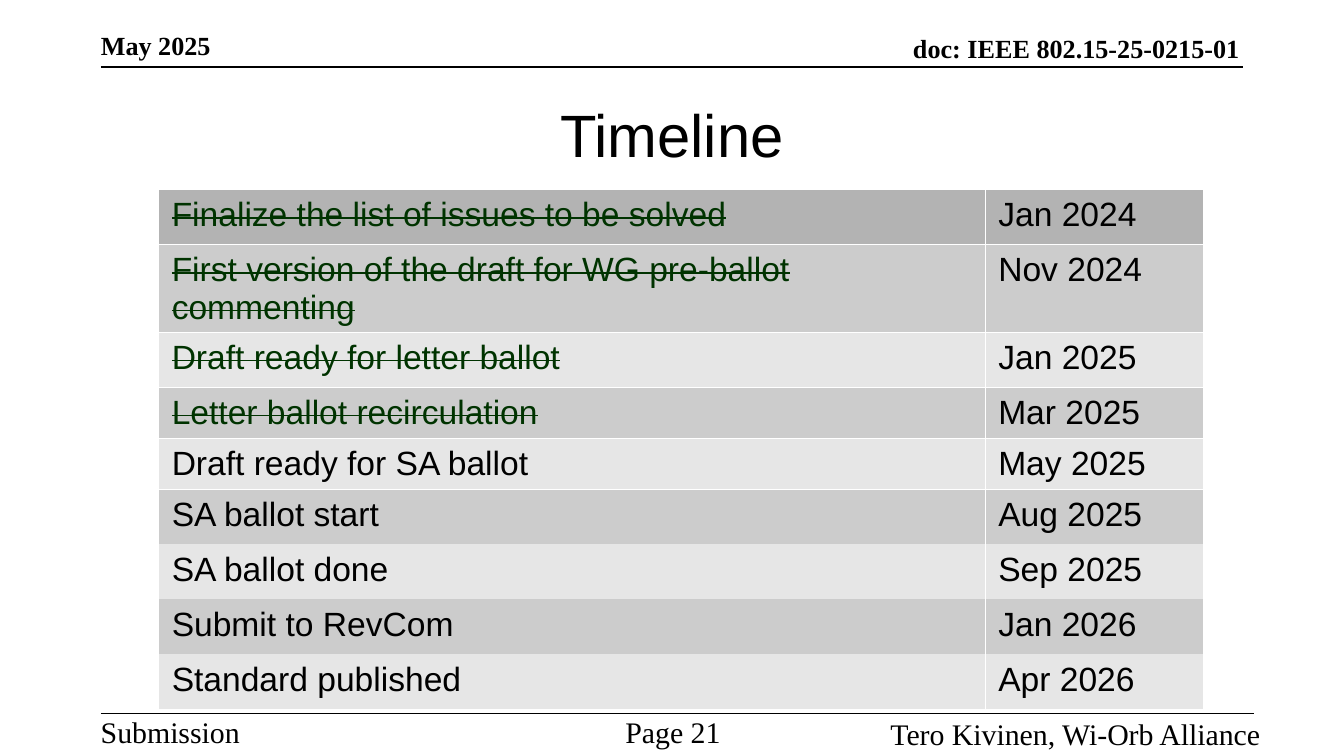
from typing import NamedTuple

from lxml.etree import SubElement
from pptx import Presentation
from pptx.dml.color import RGBColor
from pptx.enum.shapes import MSO_CONNECTOR
from pptx.enum.text import MSO_ANCHOR as Anchor, PP_ALIGN as Align
from pptx.oxml.ns import qn
from pptx.util import Pt

BLACK = RGBColor(0x00, 0x00, 0x00)
DONE_GREEN = RGBColor(0x00, 0x33, 0x00)
HEADER_GRAY = RGBColor(0xB3, 0xB3, 0xB3)
BAND_DARK = RGBColor(0xCC, 0xCC, 0xCC)
BAND_LIGHT = RGBColor(0xE6, 0xE6, 0xE6)
WHITE = RGBColor(0xFF, 0xFF, 0xFF)

SERIF = "Times New Roman"
SANS = "Arial"


class Label(NamedTuple):
    text: str
    left: float
    top: float
    width: float
    height: float
    size: float
    align: Align = Align.LEFT
    anchor: Anchor = Anchor.TOP
    bold: bool = False


class Rule(NamedTuple):
    left: float
    right: float
    y: float


class Milestone(NamedTuple):
    task: str
    date: str
    done: bool = False
    height: float = 29.5
    bottom_margin: float = 3.6  # 0 lets a tight row keep its height


LABELS = [
    Label("May 2025", 54, 21.6, 200.9, 10.8, 14, anchor=Anchor.BOTTOM, bold=True),
    Label("doc: IEEE 802.15-25-0215-01", 243.7, 23.3, 420.5, 10.8, 14,
          Align.RIGHT, Anchor.BOTTOM, True),
    Label("Submission", 54, 382.3, 134.6, 16.6, 16),
    Label("Page 21", 295.2, 382.3, 130.6, 16.6, 16, Align.CENTER),
    Label("Tero Kivinen, Wi-Orb Alliance", 411.1, 383.2, 264.2, 16.6, 16, Align.RIGHT),
]

RULES = [Rule(54, 666, 36), Rule(54, 671.8, 382.3)]

MILESTONES = [
    Milestone("Finalize the list of issues to be solved", "Jan 2024", True),
    Milestone("First version of the draft for WG pre-ballot commenting", "Nov 2024",
              True, 46.9, 0),
    Milestone("Draft ready for letter ballot", "Jan 2025", True),
    Milestone("Letter ballot recirculation", "Mar 2025", True, 27.4, 0),
    Milestone("Draft ready for SA ballot", "May 2025", False, 27.4, 0),
    Milestone("SA ballot start", "Aug 2025"),
    Milestone("SA ballot done", "Sep 2025"),
    Milestone("Submit to RevCom", "Jan 2026"),
    Milestone("Standard published", "Apr 2026"),
]
COLUMN_WIDTHS = [442.8, 117]
LAST_RULED_ROW = 5  # rows below this one have no line between them


def add_run(paragraph, text: str, font: str, size: float,
            color: RGBColor = BLACK, bold: bool = False, strike: bool = False) -> None:
    run = paragraph.add_run()
    run.text = text
    run.font.name = font
    run.font.size = Pt(size)
    run.font.bold = bold
    run.font.color.rgb = color
    if strike:
        run._r.get_or_add_rPr().set("strike", "sngStrike")


def clear_margins(frame) -> None:
    frame.margin_left = frame.margin_right = Pt(0)
    frame.margin_top = frame.margin_bottom = Pt(0)


def add_label(slide, label: Label) -> None:
    box = slide.shapes.add_textbox(Pt(label.left), Pt(label.top),
                                   Pt(label.width), Pt(label.height))
    frame = box.text_frame
    frame.word_wrap = True
    frame.vertical_anchor = label.anchor
    clear_margins(frame)
    paragraph = frame.paragraphs[0]
    paragraph.alignment = label.align
    add_run(paragraph, label.text, SERIF, label.size, bold=label.bold)


def add_rule(slide, rule: Rule) -> None:
    line = slide.shapes.add_connector(MSO_CONNECTOR.STRAIGHT, Pt(rule.left), Pt(rule.y),
                                      Pt(rule.right), Pt(rule.y))
    line.line.color.rgb = BLACK
    line.line.width = Pt(1)
    SubElement(line._element.spPr, qn("a:effectLst"))


def set_border(cell, side: str, visible: bool) -> None:
    border = SubElement(cell._tc.get_or_add_tcPr(), qn(f"a:ln{side}"), w=str(Pt(0.06)))
    if visible:
        fill = SubElement(border, qn("a:solidFill"))
        SubElement(fill, qn("a:srgbClr"), val=str(WHITE))
    else:
        SubElement(border, qn("a:noFill"))


def row_fill(row: int) -> RGBColor:
    if row == 0:
        return HEADER_GRAY
    return BAND_DARK if row % 2 else BAND_LIGHT


def add_timeline(slide, left: float, top: float) -> None:
    last = len(MILESTONES) - 1
    table = slide.shapes.add_table(
        len(MILESTONES), len(COLUMN_WIDTHS), Pt(left), Pt(top),
        Pt(sum(COLUMN_WIDTHS)), Pt(sum(m.height for m in MILESTONES))).table
    for column, width in zip(table.columns, COLUMN_WIDTHS):
        column.width = Pt(width)
    for row, milestone in enumerate(MILESTONES):
        table.rows[row].height = Pt(milestone.height)
        borders = {"L": True, "R": True, "T": row <= LAST_RULED_ROW,
                   "B": row < LAST_RULED_ROW or row == last}
        for column, text in enumerate((milestone.task, milestone.date)):
            cell = table.cell(row, column)
            for side, visible in borders.items():
                set_border(cell, side, visible)
            cell.fill.solid()
            cell.fill.fore_color.rgb = row_fill(row)
            cell.margin_left = cell.margin_right = Pt(7.2)
            cell.margin_top = Pt(3.6)
            cell.margin_bottom = Pt(milestone.bottom_margin)
            struck = milestone.done and column == 0
            add_run(cell.text_frame.paragraphs[0], text, SANS, 18,
                    DONE_GREEN if struck else BLACK, strike=struck)


def add_title(slide, text: str) -> None:
    title = slide.shapes.title
    title.left, title.top, title.width, title.height = Pt(36), Pt(34.6), Pt(648), Pt(74.2)
    frame = title.text_frame
    frame.vertical_anchor = Anchor.MIDDLE
    clear_margins(frame)
    paragraph = frame.paragraphs[0]
    paragraph.alignment = Align.CENTER
    add_run(paragraph, text, SANS, 32)


def main() -> None:
    deck = Presentation()
    deck.slide_width, deck.slide_height = Pt(720), Pt(405)
    slide = deck.slides.add_slide(deck.slide_layouts[5])

    # Page header and footer
    for rule in RULES:
        add_rule(slide, rule)
    for label in LABELS:
        add_label(slide, label)

    # Title and timeline table
    add_title(slide, "Timeline")
    add_timeline(slide, 84.8, 101.5)

    deck.save("out.pptx")


if __name__ == "__main__":
    main()
